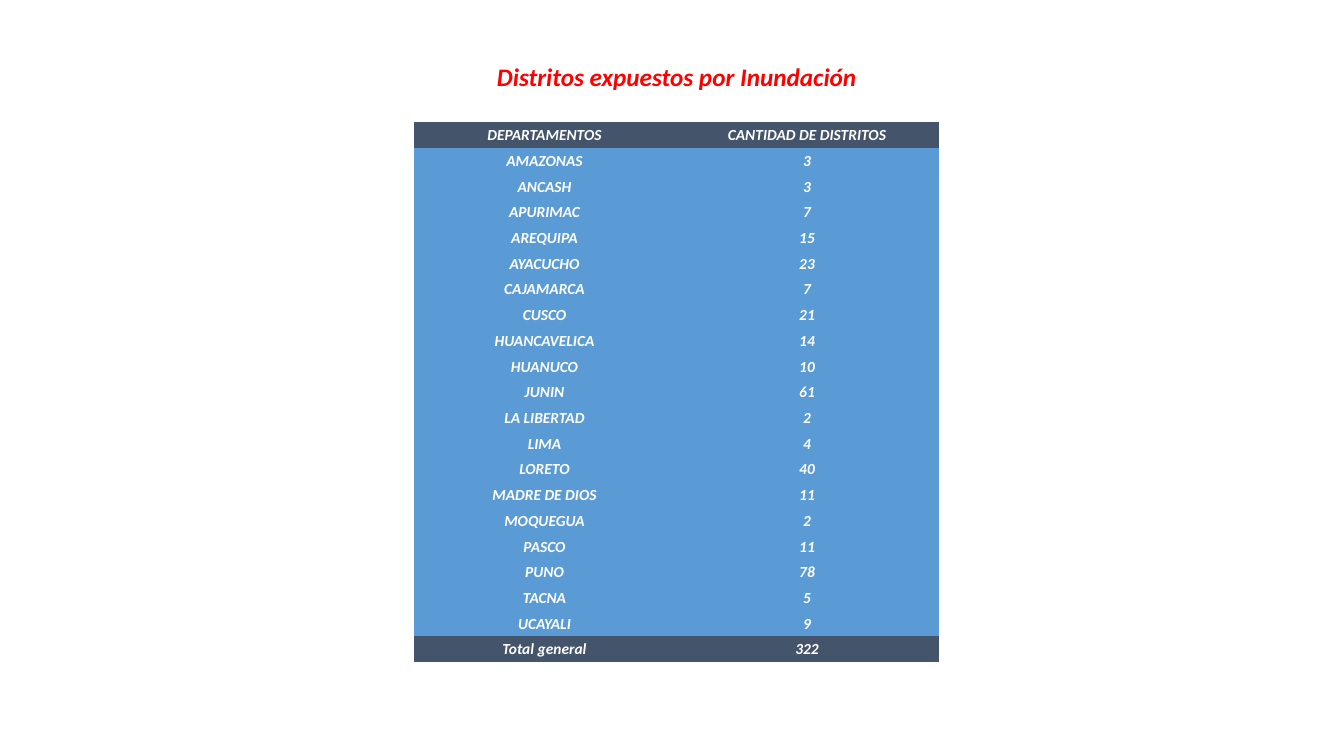
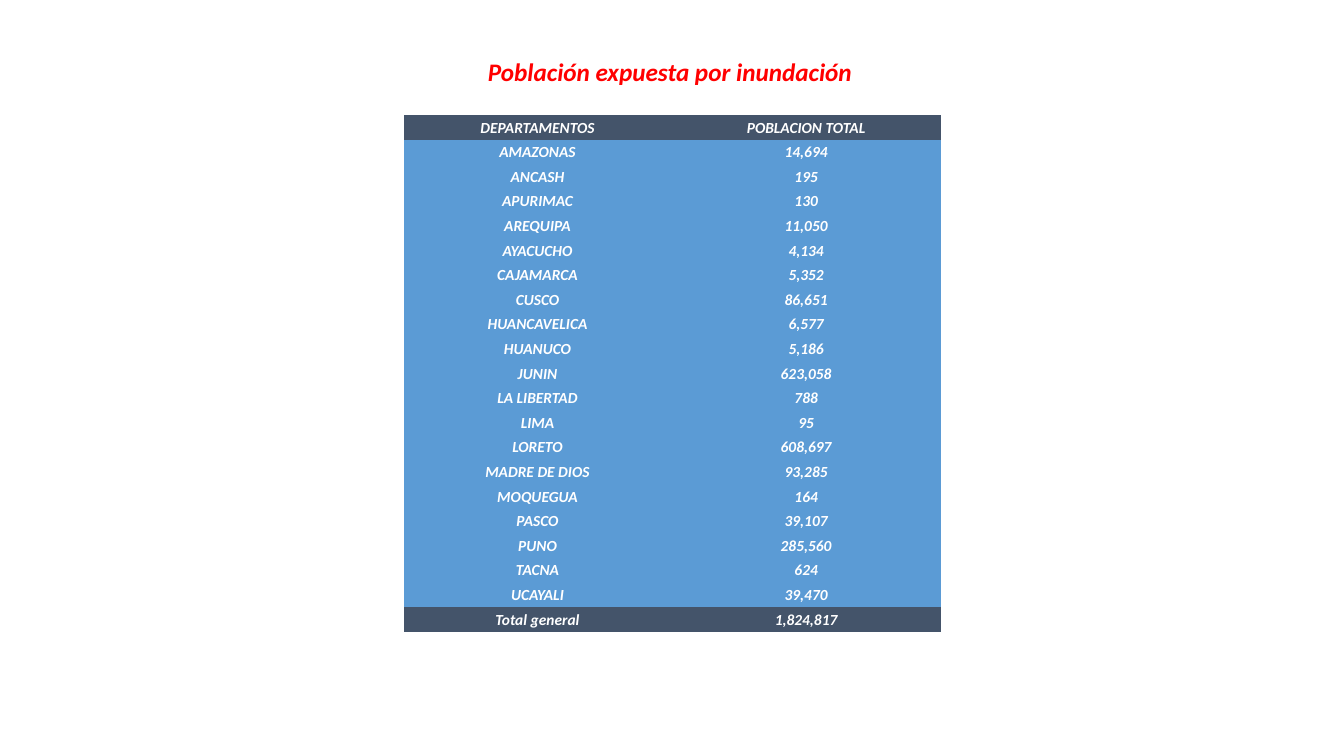
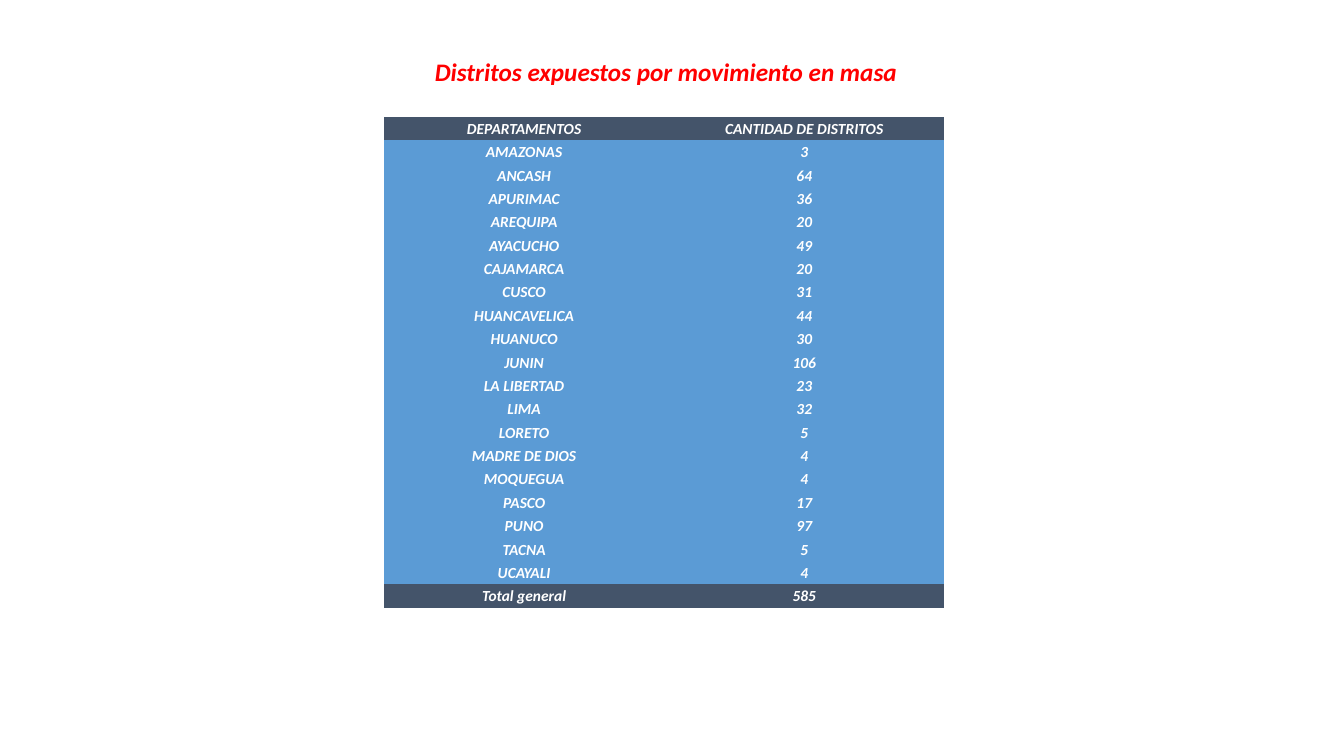
from dataclasses import dataclass

from pptx import Presentation
from pptx.dml.color import RGBColor
from pptx.enum.text import MSO_ANCHOR, MSO_AUTO_SIZE, PP_ALIGN
from pptx.oxml.ns import qn
from pptx.slide import Slide
from pptx.text.text import TextFrame
from pptx.util import Pt

COLORS = {"title": "FF0000", "text": "FFFFFF", "band": "44546A", "body": "5B9BD5"}
FONT = "Calibri"
PLAIN_STYLE = "{2D5ABB26-0587-4C30-8999-92F81FD0307C}"
TITLE_ONLY = 5
TITLE_HIGH = 29.1
REGIONS = (
    "AMAZONAS", "ANCASH", "APURIMAC", "AREQUIPA", "AYACUCHO", "CAJAMARCA", "CUSCO",
    "HUANCAVELICA", "HUANUCO", "JUNIN", "LA LIBERTAD", "LIMA", "LORETO",
    "MADRE DE DIOS", "MOQUEGUA", "PASCO", "PUNO", "TACNA", "UCAYALI",
)


@dataclass(frozen=True)
class Box:
    left: float
    top: float
    width: float


@dataclass(frozen=True)
class Page:
    title: str
    place: Box
    grid: Box
    first: float  # width of the first column
    row: float  # height of each row
    head: str
    counts: tuple[int, ...]
    total: int


PAGES = (
    Page("Distritos expuestos por Inundación",
         Box(346.3, 39.9, 274.3), Box(295.7, 87.1, 375.1), 186.5, 18.38,
         "CANTIDAD DE DISTRITOS",
         (3, 3, 7, 15, 23, 7, 21, 14, 10, 61, 2, 4, 40, 11, 2, 11, 78, 5, 9), 322),
    Page("Población expuesta por inundación",
         Box(340, 36.7, 277.2), Box(288.7, 82.1, 383.8), 190.5, 17.59,
         "POBLACION TOTAL",
         (14694, 195, 130, 11050, 4134, 5352, 86651, 6577, 5186, 623058, 788, 95,
          608697, 93285, 164, 39107, 285560, 624, 39470), 1824817),
    Page("Distritos expuestos por movimiento en masa",
         Box(299.3, 36.7, 352.8), Box(274.3, 83.5, 400.3), 200.15, 16.7,
         "CANTIDAD DE DISTRITOS",
         (3, 64, 36, 20, 49, 20, 31, 44, 30, 106, 23, 32, 5, 4, 4, 17, 97, 5, 4), 585),
)


def write(frame: TextFrame, text: str, *, size: float, color: str) -> None:
    """Set centred bold italic text."""
    line = frame.paragraphs[0]
    line.alignment = PP_ALIGN.CENTER
    run = line.add_run()
    run.text = text
    font = run.font
    font.name, font.size = FONT, Pt(size)
    font.bold = font.italic = True
    font.color.rgb = RGBColor.from_string(COLORS[color])


def add_title(slide: Slide, page: Page) -> None:
    title, place = slide.shapes.title, page.place
    title.left, title.top = Pt(place.left), Pt(place.top)
    title.width, title.height = Pt(place.width), Pt(TITLE_HIGH)
    frame = title.text_frame
    frame.word_wrap = False
    frame.auto_size = MSO_AUTO_SIZE.SHAPE_TO_FIT_TEXT
    frame.vertical_anchor = MSO_ANCHOR.TOP
    write(frame, page.title, size=18, color="title")


def add_grid(slide: Slide, page: Page) -> None:
    rows = [("DEPARTAMENTOS", page.head)]
    rows += [(name, f"{count:,}") for name, count in zip(REGIONS, page.counts)]
    rows.append(("Total general", f"{page.total:,}"))

    grid = page.grid
    table = slide.shapes.add_table(
        len(rows), 2, Pt(grid.left), Pt(grid.top), Pt(grid.width), Pt(page.row * len(rows))
    ).table
    table.first_row = table.horz_banding = False
    table._tbl.tblPr.find(qn("a:tableStyleId")).text = PLAIN_STYLE
    table.columns[0].width = Pt(page.first)
    table.columns[1].width = Pt(grid.width - page.first)

    for i, texts in enumerate(rows):
        table.rows[i].height = Pt(page.row)
        fill = "band" if i in (0, len(rows) - 1) else "body"
        for j, text in enumerate(texts):
            cell = table.cell(i, j)
            cell.fill.solid()
            cell.fill.fore_color.rgb = RGBColor.from_string(COLORS[fill])
            cell.vertical_anchor = MSO_ANCHOR.MIDDLE
            cell.margin_left = cell.margin_right = cell.margin_top = Pt(0.7)
            cell.margin_bottom = Pt(0)
            write(cell.text_frame, text, size=11, color="text")


def main() -> None:
    deck = Presentation()
    deck.slide_width, deck.slide_height = Pt(960), Pt(540)
    for page in PAGES:
        slide = deck.slides.add_slide(deck.slide_layouts[TITLE_ONLY])
        add_title(slide, page)
        add_grid(slide, page)
    deck.save("out.pptx")


if __name__ == "__main__":
    main()
